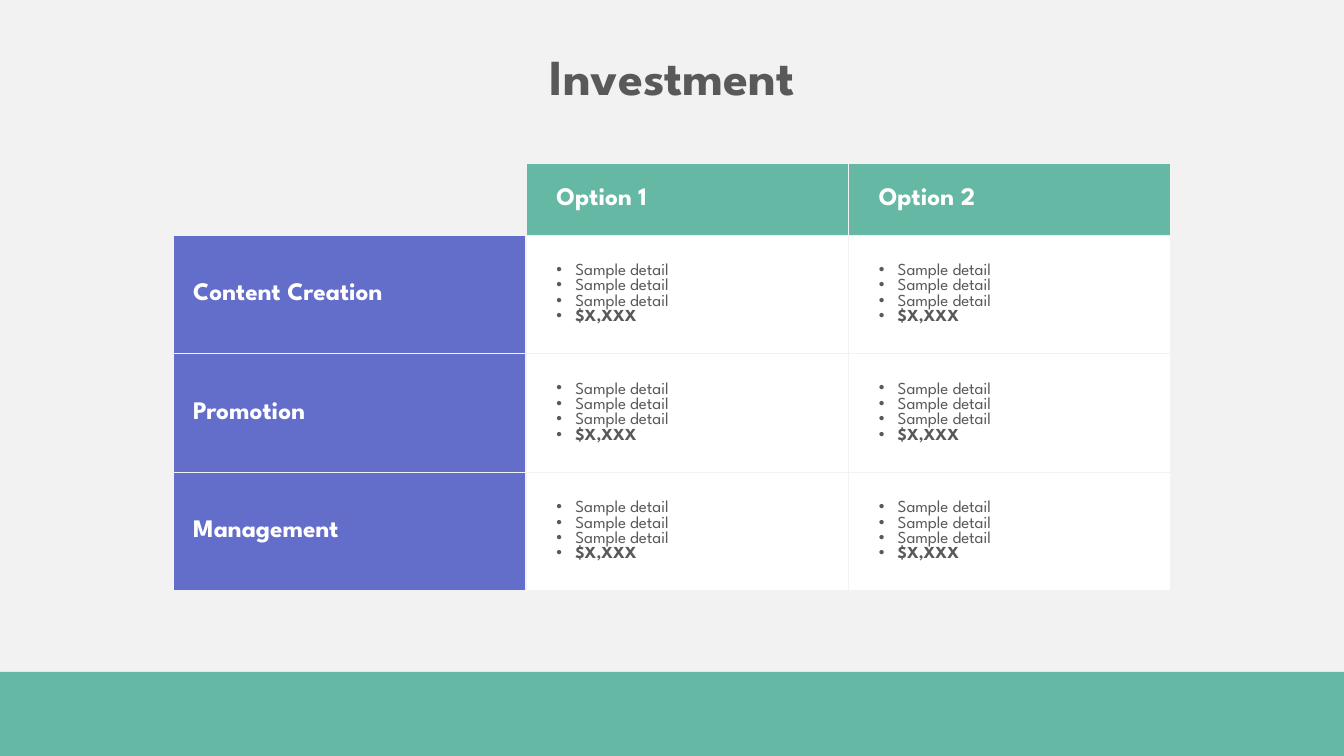
"""Build the Investment slide: two options compared over three services."""
from dataclasses import dataclass

from lxml import etree
from pptx import Presentation
from pptx import util as u
from pptx.dml.color import RGBColor
from pptx.enum import shapes, text
from pptx.oxml import ns

PX = 9525
HUES = {"page": "F2F2F2", "teal": "65B9A4", "blue": "636DCA",
        "white": "FFFFFF", "grey": "595959"}
FACE = "League Spartan"
COLS = (336, 307, 307)
ROWS = (68, 113, 113, 113)
PAD = {"margin_top": 5, "margin_bottom": 5}
OPTIONS = ("Option 1", "Option 2")
TOPICS = ("Content Creation", "Promotion", "Management")
DETAIL = ("Sample detail",) * 3 + ("$X,XXX",)


@dataclass(frozen=True)
class Style:
    fill: str
    ink: str
    size: int
    left: int
    right: int
    dots: bool = False


HEAD = Style("teal", "white", 18, 29, 10)
SIDE = Style("blue", "white", 18, 19, 19)
BODY = Style("white", "grey", 12, 29, 10, True)


def px(num: int) -> int:
    return u.Emu(num * PX)


def rgb(hue: str) -> RGBColor:
    return RGBColor.from_string(HUES[hue])


def paint(item, hue: str) -> None:
    item.fill.solid()
    item.fill.fore_color.rgb = rgb(hue)


def write(para, words: str, size: int, ink: str, bold: bool = True) -> None:
    run = para.add_run()
    run.text = words
    for key, val in {"name": FACE, "size": u.Pt(size), "bold": bold}.items():
        setattr(run.font, key, val)
    run.font.color.rgb = rgb(ink)


def bullet(para) -> None:
    props = para._p.get_or_add_pPr()
    for key, val in {"marL": 18, "indent": -18}.items():
        props.set(key, str(px(val)))
    etree.SubElement(props, ns.qn("a:buChar"), char="•")


def border(cell) -> None:
    props = cell._tc.get_or_add_tcPr()
    for spot, side in enumerate(("lnL", "lnR", "lnT", "lnB")):
        line = etree.Element(ns.qn(f"a:{side}"), w=str(u.Pt(1)))
        fill = etree.SubElement(line, ns.qn("a:solidFill"))
        etree.SubElement(fill, ns.qn("a:srgbClr"), val=HUES["page"])
        props.insert(spot, line)


def fill_cell(cell, style: Style, lines: tuple[str, ...]) -> None:
    paint(cell, style.fill)
    cell.vertical_anchor = text.MSO_ANCHOR.MIDDLE
    pads = PAD | {"margin_left": style.left, "margin_right": style.right}
    for key, val in pads.items():
        setattr(cell, key, px(val))
    frame = cell.text_frame
    for spot, words in enumerate(lines):
        para = frame.add_paragraph() if spot else frame.paragraphs[0]
        if style.dots:
            bullet(para)
        bold = not style.dots or spot == len(lines) - 1
        write(para, words, style.size, style.ink, bold)


def add_grid(slide) -> None:
    box = map(px, (165, 156, sum(COLS), sum(ROWS)))
    grid = slide.shapes.add_table(len(ROWS), len(COLS), *box).table
    for key in ("first_row", "horz_banding"):
        setattr(grid, key, False)
    for col, wide in zip(grid.columns, COLS):
        col.width = px(wide)
    for row, high in zip(grid.rows, ROWS):
        row.height = px(high)
    grid.cell(0, 0).fill.background()
    for col, name in enumerate(OPTIONS, 1):
        fill_cell(grid.cell(0, col), HEAD, (name,))
    for row, name in enumerate(TOPICS, 1):
        fill_cell(grid.cell(row, 0), SIDE, (name,))
        for col in range(1, len(COLS)):
            fill_cell(grid.cell(row, col), BODY, DETAIL)
    for cell in grid.iter_cells():
        border(cell)


def add_title(slide) -> None:
    box = slide.shapes.add_textbox(*map(px, (135, 38, 1010, 68)))
    frame = box.text_frame
    frame.word_wrap = True
    para = frame.paragraphs[0]
    para.alignment = text.PP_ALIGN.CENTER
    write(para, "Investment", 36, "grey")


def add_band(slide) -> None:
    kind = shapes.MSO_SHAPE.RECTANGLE
    band = slide.shapes.add_shape(kind, *map(px, (0, 640, 1280, 80)))
    band.shadow.inherit = False
    paint(band, "teal")
    band.line.fill.background()


def main() -> None:
    deck = Presentation()
    deck.slide_width, deck.slide_height = px(1280), px(720)
    slide = deck.slides.add_slide(deck.slide_layouts[6])
    paint(slide.background, "page")
    add_grid(slide)
    add_title(slide)
    add_band(slide)
    deck.save("out.pptx")


if __name__ == "__main__":
    main()
